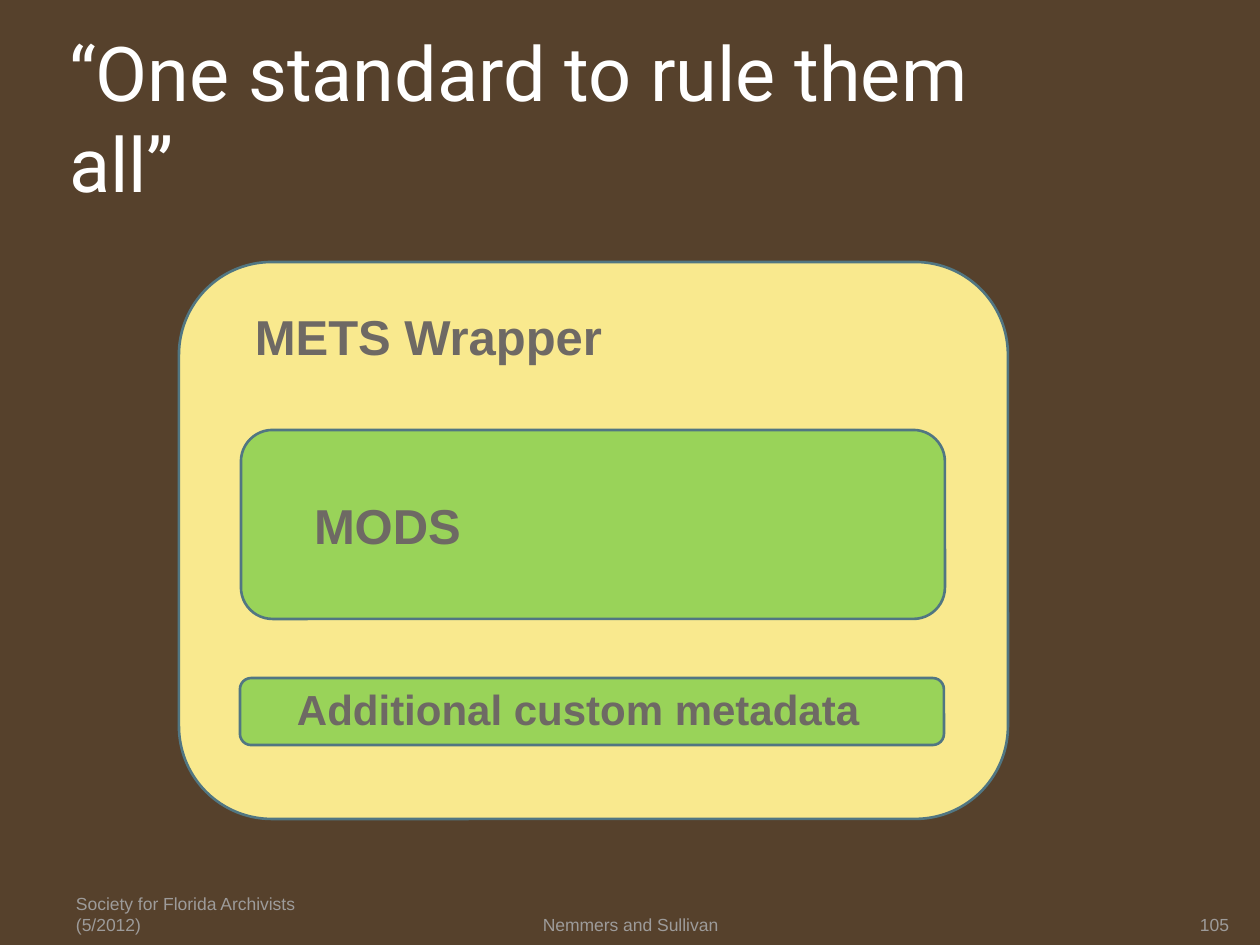
from pptx import Presentation
from pptx.dml.color import RGBColor
from pptx.enum.shapes import MSO_SHAPE
from pptx.enum.text import MSO_ANCHOR, PP_ALIGN
from pptx.util import Pt

EMU_PER_PX = 914400 / 126

BROWN = RGBColor(0x56, 0x41, 0x2C)
WHITE = RGBColor(0xFF, 0xFF, 0xFF)
YELLOW = RGBColor(0xF9, 0xE9, 0x8E)
GREEN = RGBColor(0x99, 0xD3, 0x59)
BLUE = RGBColor(0x51, 0x76, 0x82)
DARK_GRAY = RGBColor(0x6E, 0x69, 0x64)
LIGHT_GRAY = RGBColor(0x9D, 0x9B, 0x9A)

# Places are left, top, width, height in px; margins are left, top, right, bottom
TITLE = ("“One standard to rule them all”", (63, 38, 1029, 157))

CONTAINERS = [
    ((179, 262, 829, 557), YELLOW),
    ((241, 430, 704, 189), GREEN),
    ((240, 678, 704, 67), GREEN),
]

LABELS = [
    ("METS Wrapper", (242, 300, 441, 72), 28),
    ("MODS", (301, 489, 536, 72), 28),
    ("Additional custom metadata", (284, 678, 639, 63), 24),
]

FOOTER_TOP, FOOTER_HEIGHT = 885, 50
FOOTERS = [
    ("Society for Florida Archivists (5/2012)", 63, 294, PP_ALIGN.LEFT, (13, 6, 13, 0)),
    ("Nemmers and Sullivan", 431, 399, PP_ALIGN.CENTER, (0, 6, 0, 0)),
    ("105", 1124, 105, PP_ALIGN.RIGHT, (0, 0, 0, 0)),
]


def px(length):
    return round(length * EMU_PER_PX)


def add_text(page, text, place, size, color, font="Arial", bold=False,
             align=PP_ALIGN.LEFT, anchor=MSO_ANCHOR.TOP, margins=(13, 6, 13, 6)):
    box = page.shapes.add_textbox(*map(px, place))
    frame = box.text_frame
    frame.word_wrap = True
    frame.vertical_anchor = anchor
    (frame.margin_left, frame.margin_top,
     frame.margin_right, frame.margin_bottom) = map(px, margins)
    para = frame.paragraphs[0]
    para.text = text
    para.alignment = align
    para.font.name = font
    para.font.size = Pt(size)
    para.font.bold = bold
    para.font.color.rgb = color


def add_container(page, place, color):
    shape = page.shapes.add_shape(MSO_SHAPE.ROUNDED_RECTANGLE, *map(px, place))
    shape.shadow.inherit = False
    shape.fill.solid()
    shape.fill.fore_color.rgb = color
    shape.line.color.rgb = BLUE
    shape.line.width = Pt(1.5)


def main():
    deck = Presentation()
    deck.slide_width, deck.slide_height = px(1260), px(945)
    page = deck.slides.add_slide(deck.slide_layouts[6])
    page.background.fill.solid()
    page.background.fill.fore_color.rgb = BROWN

    # Title
    text, place = TITLE
    add_text(page, text, place, 43.2, WHITE, font="Roboto",
             anchor=MSO_ANCHOR.MIDDLE, margins=(6, 6, 6, 6))

    # Nested metadata containers and their labels
    for place, color in CONTAINERS:
        add_container(page, place, color)
    for text, place, size in LABELS:
        add_text(page, text, place, size, DARK_GRAY, bold=True)

    # Footer row
    for text, left, width, align, margins in FOOTERS:
        add_text(page, text, (left, FOOTER_TOP, width, FOOTER_HEIGHT), 10, LIGHT_GRAY,
                 align=align, anchor=MSO_ANCHOR.BOTTOM, margins=margins)

    deck.save("out.pptx")


if __name__ == "__main__":
    main()
